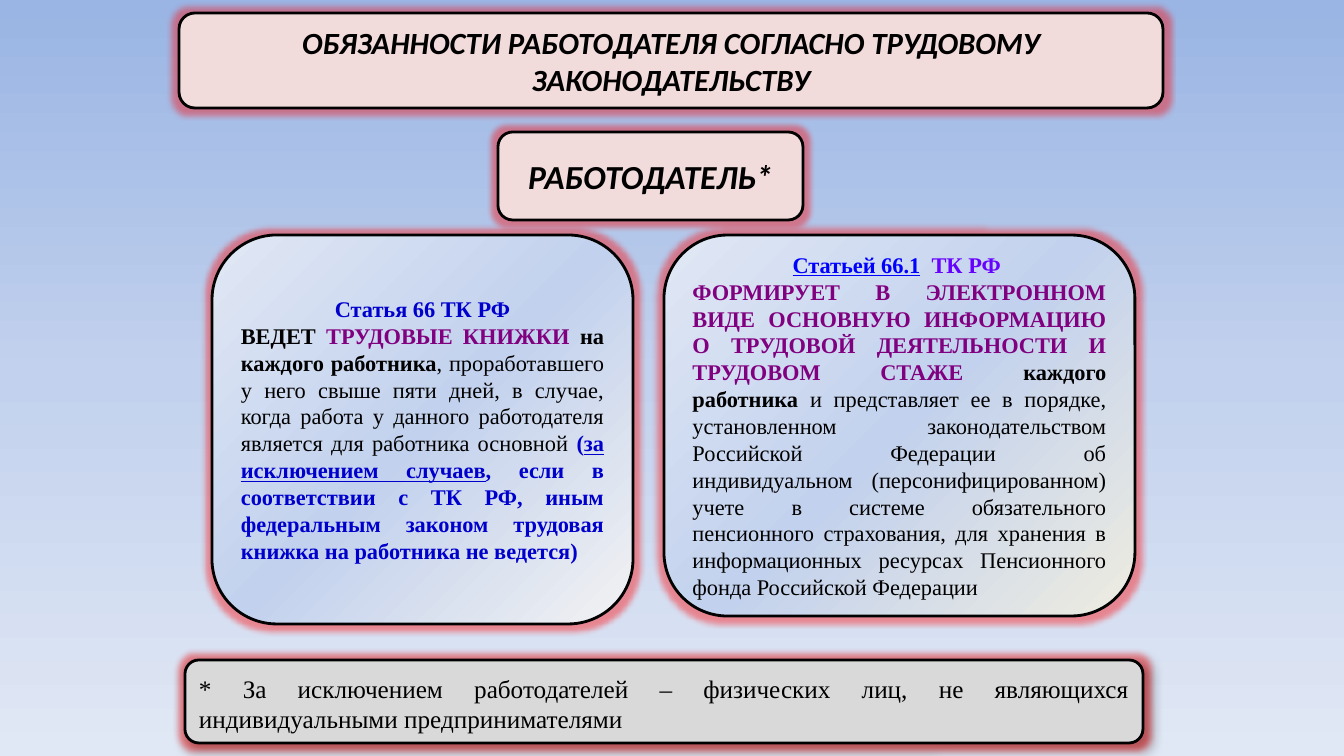
from copy import deepcopy

from lxml import etree
from pptx import Presentation
from pptx.dml.color import RGBColor
from pptx.enum.shapes import MSO_SHAPE
from pptx.enum.text import MSO_ANCHOR as ANCHOR, PP_ALIGN as ALIGN
from pptx.oxml.ns import nsdecls
from pptx.util import Pt

PX = 914400 / 100.8
THEME = {
    "black": "000000", "rose": "F2DCDB", "grey": "D9D9D9", "glow": "FF0000",
    "navy": "0000CC", "link": "0000FF", "violet": "6600FF", "purple": "800080",
    "background": ("9AB5E4", "C2D1ED", "E1E8F5"),
    "left panel": ("F2F2F2", "C2D1ED", "E1E8F5"),
    "right panel": ("EEECE1", "C2D1ED", "E1E8F5"),
    "heading font": "Calibri", "body font": "Times New Roman",
    "title size": 22, "employer size": 24, "panel size": 16, "note size": 18,
}
GLOW = f"""<a:glow {nsdecls('a')} rad="{Pt(8)}"><a:srgbClr val="{THEME['glow']}">
<a:alpha val="40000"/></a:srgbClr></a:glow>"""
NOTE_SHADOW = f"""<a:outerShdw {nsdecls('a')} blurRad="{Pt(4)}" dist="{Pt(3)}" dir="2700000">
<a:srgbClr val="{THEME['black']}"><a:alpha val="40000"/></a:srgbClr></a:outerShdw>"""


def set_gradient(fill, element, colours, angle):
    """Apply three evenly spaced stops; the angle runs counter-clockwise."""
    fill.gradient()
    fill.gradient_angle = angle
    stop_list = element.xpath(".//a:gsLst")[0]
    stop_list.insert(1, deepcopy(stop_list[0]))
    for index, (stop, colour) in enumerate(zip(fill.gradient_stops, colours)):
        stop.position = index / 2
        stop.color.rgb = RGBColor.from_string(colour)


def add_box(box, fill, anchor, paragraphs, font, size, italic=False, effects=(GLOW,)):
    """Add a glowing rounded box; each run is (text, colour, bold, underline)."""
    shape = slide.shapes.add_shape(MSO_SHAPE.ROUNDED_RECTANGLE, *(round(v * PX) for v in box))
    if isinstance(THEME[fill], tuple):
        set_gradient(shape.fill, shape._element, THEME[fill], 135)
    else:
        shape.fill.solid()
        shape.fill.fore_color.rgb = RGBColor.from_string(THEME[fill])
    shape.line.color.rgb = RGBColor.from_string(THEME["black"])
    shape.line.width = Pt(2)
    shape.shadow.inherit = False
    effect_list = shape._element.xpath("./p:spPr/a:effectLst")[0]
    for effect in effects:
        effect_list.append(etree.fromstring(effect))
    frame = shape.text_frame
    frame.word_wrap = True
    frame.vertical_anchor = anchor
    for index, (alignment, runs) in enumerate(paragraphs):
        paragraph = frame.add_paragraph() if index else frame.paragraphs[0]
        paragraph.alignment = alignment
        for text, colour, bold, underline in runs:
            run = paragraph.add_run()
            run.text = text
            run.font.color.rgb = RGBColor.from_string(THEME[colour])
            formats = {"name": THEME[font], "size": Pt(THEME[size]), "bold": bold,
                       "italic": italic, "underline": underline}
            for name, value in formats.items():
                setattr(run.font, name, value)


presentation = Presentation()
presentation.slide_width = round(1344 * PX)
presentation.slide_height = round(756 * PX)
slide = presentation.slides.add_slide(presentation.slide_layouts[6])
set_gradient(slide.background.fill, slide._element, THEME["background"], 270)

headings = [
    ((179, 13, 984, 95), "title size",
     "ОБЯЗАННОСТИ РАБОТОДАТЕЛЯ СОГЛАСНО ТРУДОВОМУ ЗАКОНОДАТЕЛЬСТВУ"),
    ((498, 132, 305, 88), "employer size", "РАБОТОДАТЕЛЬ*"),
]
panels = [
    ((212, 235, 421, 389), "left panel", [
        (ALIGN.CENTER, [("Статья 66 ТК РФ", "navy", True, False)]),
        (ALIGN.JUSTIFY, [
            ("ВЕДЕТ ", "black", True, False),
            ("ТРУДОВЫЕ КНИЖКИ ", "purple", True, False),
            ("на каждого работника", "black", True, False),
            (", проработавшего у него свыше пяти дней, в случае, когда работа у данного "
             "работодателя является для работника основной ", "black", False, False),
            ("(", "navy", True, False),
            ("за исключением случаев", "navy", True, True),
            (", если в соответствии с ТК РФ, иным федеральным законом трудовая книжка "
             "на работника не ведется)", "navy", True, False),
        ]),
    ]),
    ((664, 235, 471, 381), "right panel", [
        (ALIGN.CENTER, [("Статьей 66.1", "link", True, True),
                        ("  ТК РФ ", "violet", True, False)]),
        (ALIGN.JUSTIFY, [
            ("ФОРМИРУЕТ В ЭЛЕКТРОННОМ ВИДЕ ОСНОВНУЮ ИНФОРМАЦИЮ О ТРУДОВОЙ "
             "ДЕЯТЕЛЬНОСТИ И ТРУДОВОМ СТАЖЕ ", "purple", True, False),
            ("каждого работника ", "black", True, False),
            ("и представляет ее в порядке, установленном законодательством Российской "
             "Федерации об индивидуальном (персонифицированном) учете в системе "
             "обязательного пенсионного страхования, для хранения в информационных "
             "ресурсах Пенсионного фонда Российской Федерации", "black", False, False),
        ]),
    ]),
]
note = ("* За исключением работодателей – физических лиц, не являющихся "
        "индивидуальными предпринимателями")

for box, fill, paragraphs in panels:
    add_box(box, fill, ANCHOR.MIDDLE, paragraphs, "body font", "panel size")
for box, size, text in headings:
    add_box(box, "rose", ANCHOR.MIDDLE, [(ALIGN.CENTER, [(text, "black", True, False)])],
            "heading font", size, italic=True)
add_box((185, 660, 958, 83), "grey", ANCHOR.BOTTOM,
        [(ALIGN.JUSTIFY, [(note, "black", False, False)])],
        "body font", "note size", effects=(GLOW, NOTE_SHADOW))

presentation.save("out.pptx")
